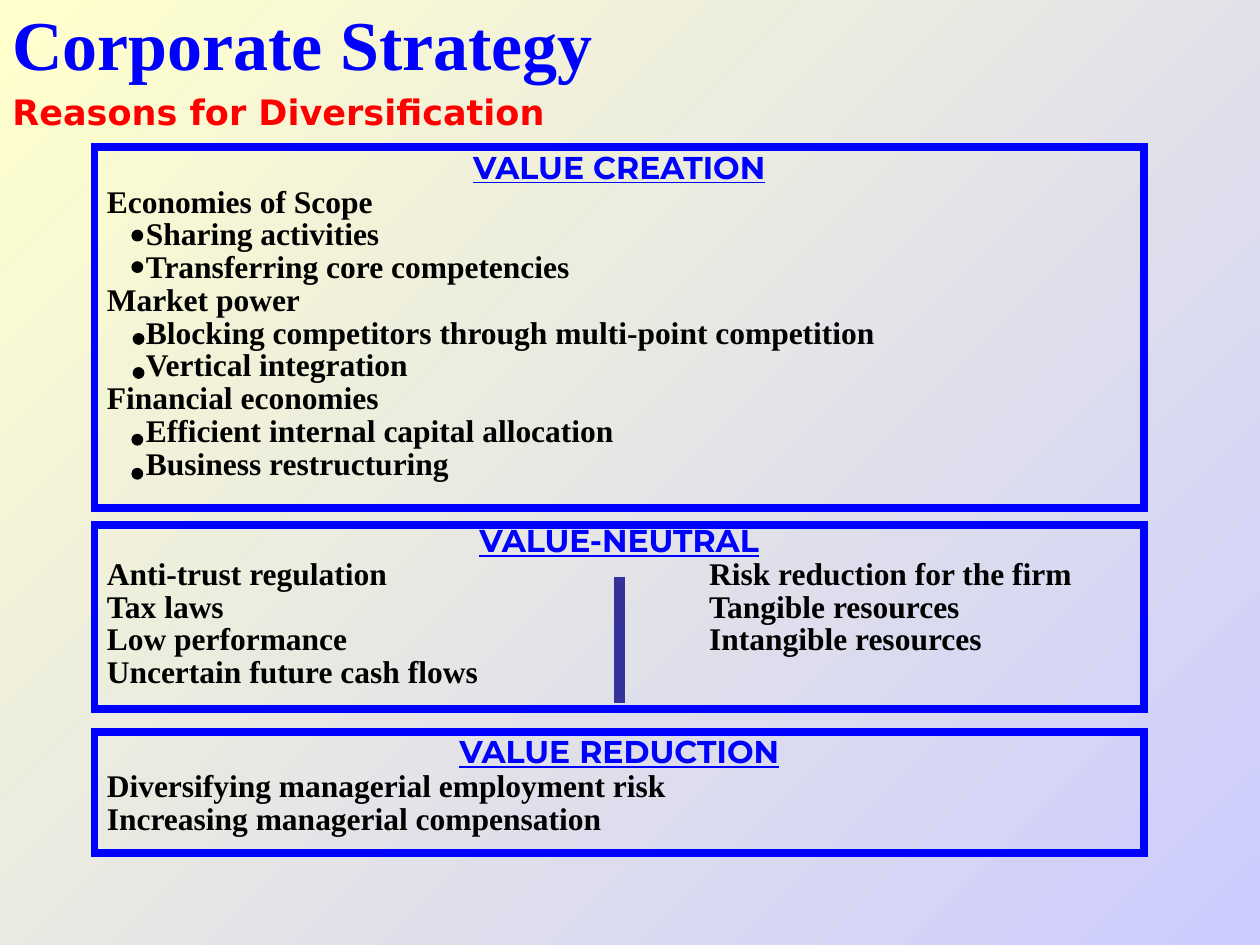
from dataclasses import dataclass

import lxml.etree
import pptx
import pptx.dml.color
import pptx.enum.shapes
import pptx.enum.text
import pptx.oxml.ns
import pptx.util

Inches = pptx.util.Inches
Pt = pptx.util.Pt
MSO_SHAPE = pptx.enum.shapes.MSO_SHAPE
MSO_ANCHOR = pptx.enum.text.MSO_ANCHOR
PP_ALIGN = pptx.enum.text.PP_ALIGN
qn = pptx.oxml.ns.qn


@dataclass(frozen=True)
class Theme:
    blue: str = "0000FF"
    red: str = "FF0000"
    black: str = "000000"
    divider: str = "333399"
    background: tuple = ("FFFFCC", "CCCCFF")
    serif: str = "Times New Roman"
    sans: str = "DejaVu Sans"
    heading: str = "Montserrat"
    title_size: int = 40
    subtitle_size: int = 20
    body_size: int = 18
    item_gap: float = 3.6


@dataclass(frozen=True)
class Item:
    text: str
    indented: bool = False


@dataclass(frozen=True)
class Panel:
    heading: str
    top: float
    height: float
    items: tuple
    heading_spacing: float = 0.85


THEME = Theme()
PANEL_LEFT, PANEL_WIDTH = 0.75, 8.33
ITEM_INDENT = 0.31
DOT_SIZE = 0.08
DOTS = ((1.05, 1.83), (1.05, 2.08), (1.06, 2.65),
        (1.06, 2.92), (1.05, 3.45), (1.05, 3.72))

PANELS = (
    Panel("VALUE CREATION", 1.17, 2.86, (
        Item("Economies of Scope"),
        Item("Sharing activities", True),
        Item("Transferring core competencies", True),
        Item("Market power"),
        Item("Blocking competitors through multi-point competition", True),
        Item("Vertical integration", True),
        Item("Financial economies"),
        Item("Efficient internal capital allocation", True),
        Item("Business restructuring", True),
    )),
    Panel("VALUE-NEUTRAL", 4.17, 1.46, (
        Item("Anti-trust regulation"),
        Item("Tax laws"),
        Item("Low performance"),
        Item("Uncertain future cash flows"),
    ), heading_spacing=0.7),
    Panel("VALUE REDUCTION", 5.81, 0.96, (
        Item("Diversifying managerial employment risk"),
        Item("Increasing managerial compensation"),
    )),
)
NEUTRAL_RIGHT_ITEMS = (
    Item("Risk reduction for the firm"),
    Item("Tangible resources"),
    Item("Intangible resources"),
)


def color(value: str):
    return pptx.dml.color.RGBColor.from_string(value)


def write(paragraph, text: str, *, font: str, size: float, fill: str,
          underline: bool = False, align=PP_ALIGN.LEFT,
          line_spacing: float = 1.0, space_before: float = 0,
          indent: float = 0) -> None:
    """Put one formatted run into a paragraph."""
    paragraph.alignment = align
    paragraph.line_spacing = line_spacing
    paragraph.space_before = Pt(space_before)
    properties = paragraph._p.get_or_add_pPr()
    properties.set("marL", str(Inches(indent)))
    properties.set("indent", "0")
    run = paragraph.add_run()
    run.text = text
    run.font.name = font
    run.font.size = Pt(size)
    run.font.bold = True
    run.font.underline = underline
    run.font.color.rgb = color(fill)


def write_item(paragraph, item: Item, space_before: float) -> None:
    write(paragraph, item.text, font=THEME.serif, size=THEME.body_size,
          fill=THEME.black, line_spacing=0.7, space_before=space_before,
          indent=ITEM_INDENT if item.indented else 0)


def add_text_box(slide, left: float, top: float, width: float, height: float,
                 anchor=MSO_ANCHOR.TOP):
    box = slide.shapes.add_textbox(Inches(left), Inches(top),
                                   Inches(width), Inches(height))
    box.text_frame.word_wrap = True
    box.text_frame.vertical_anchor = anchor
    return box.text_frame


def add_panel(slide, panel: Panel) -> None:
    shape = slide.shapes.add_shape(
        MSO_SHAPE.RECTANGLE, Inches(PANEL_LEFT), Inches(panel.top),
        Inches(PANEL_WIDTH), Inches(panel.height))
    shape.shadow.inherit = False
    shape.fill.background()
    shape.line.color.rgb = color(THEME.blue)
    shape.line.width = Pt(4.5)
    # Square corners on the frame
    outline = shape._element.spPr.find(qn("a:ln"))
    lxml.etree.SubElement(outline, qn("a:miter"), lim="800000")
    frame = shape.text_frame
    frame.word_wrap = True
    frame.vertical_anchor = MSO_ANCHOR.TOP
    write(frame.paragraphs[0], panel.heading, font=THEME.heading,
          size=THEME.body_size, fill=THEME.blue, underline=True,
          align=PP_ALIGN.CENTER, line_spacing=panel.heading_spacing)
    for item in panel.items:
        write_item(frame.add_paragraph(), item, THEME.item_gap)


def add_column(slide, items: tuple, left: float, top: float,
               width: float, height: float) -> None:
    frame = add_text_box(slide, left, top, width, height)
    write_item(frame.paragraphs[0], items[0], 0)
    for item in items[1:]:
        write_item(frame.add_paragraph(), item, THEME.item_gap)


def add_divider(slide, x: float, top: float, bottom: float) -> None:
    line = slide.shapes.add_connector(
        pptx.enum.shapes.MSO_CONNECTOR.STRAIGHT,
        Inches(x), Inches(top), Inches(x), Inches(bottom))
    line.line.color.rgb = color(THEME.divider)
    line.line.width = Pt(6)
    lxml.etree.SubElement(line._element.spPr, qn("a:effectLst"))


def add_dot(slide, left: float, top: float) -> None:
    dot = slide.shapes.add_shape(MSO_SHAPE.OVAL, Inches(left), Inches(top),
                                 Inches(DOT_SIZE), Inches(DOT_SIZE))
    dot.shadow.inherit = False
    dot.fill.solid()
    dot.fill.fore_color.rgb = color(THEME.black)
    dot.line.color.rgb = color(THEME.black)
    dot.line.width = Pt(1)


def main() -> None:
    presentation = pptx.Presentation()
    presentation.slide_width = Inches(10)
    presentation.slide_height = Inches(7.5)
    slide = presentation.slides.add_slide(presentation.slide_layouts[6])

    # Background: diagonal gradient from top left to bottom right
    fill = slide.background.fill
    fill.gradient()
    fill.gradient_angle = 315
    for stop, value, position in zip(fill.gradient_stops, THEME.background, (0, 1)):
        stop.color.rgb = color(value)
        stop.position = position

    # Title and subtitle
    title = add_text_box(slide, 0, 0, 8.17, 0.67, MSO_ANCHOR.MIDDLE)
    write(title.paragraphs[0], "Corporate Strategy", font=THEME.serif,
          size=THEME.title_size, fill=THEME.blue)
    subtitle = add_text_box(slide, 0, 0.67, 10, 0.43)
    write(subtitle.paragraphs[0], "Reasons for Diversification",
          font=THEME.sans, size=THEME.subtitle_size, fill=THEME.red)

    # Framed panels, with a second column right of the divider
    for panel in PANELS:
        add_panel(slide, panel)
    add_divider(slide, PANEL_LEFT + PANEL_WIDTH / 2, 4.58, 5.58)
    add_column(slide, NEUTRAL_RIGHT_ITEMS, 5.53, 4.43, 3.4, 0.8)

    # Bullet dots
    for left, top in DOTS:
        add_dot(slide, left, top)

    presentation.save("out.pptx")


if __name__ == "__main__":
    main()
